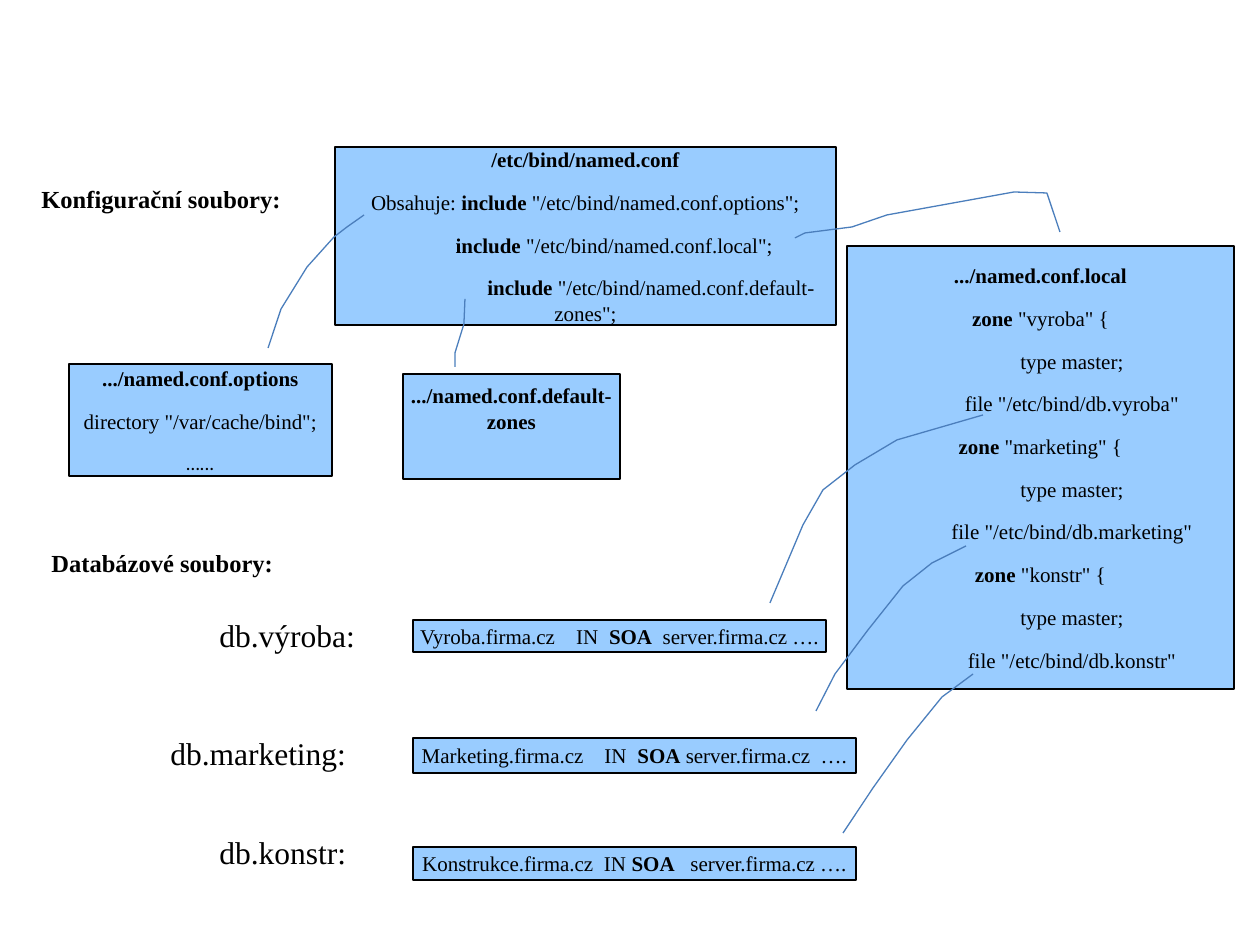
from pptx import Presentation, util as u
from pptx.dml.color import RGBColor
from pptx.enum import shapes, text

PX = u.Inches(1) / 126
COLORS = {"box": "99CCFF", "ink": "000000", "link": "4B7EBC"}
SERIF = "Times New Roman"

# Links from an include or file statement to the file it names, as x, y points
LINKS = [
    [(364, 215), (347, 227), (334, 237), (307, 267), (281, 309), (268, 348)],
    [(465, 299), (464, 324), (455, 353), (455, 367)],
    [(795, 238), (805, 233), (852, 227), (887, 215), (1014, 192),
     (1047, 193), (1060, 232)],
    [(983, 415), (897, 440), (855, 465), (823, 490), (803, 525), (770, 603)],
    [(966, 546), (932, 563), (903, 586), (868, 630), (835, 674), (816, 711)],
    [(973, 674), (942, 697), (907, 740), (873, 788), (843, 833)],
]


def px(*values):
    return [round(v * PX) for v in values]


def rgb(name):
    return RGBColor.from_string(COLORS[name])


def set_line(sp, color):
    sp.line.color.rgb = rgb(color)
    sp.line.width = u.Pt(0.75)
    sp.shadow.inherit = False


def add_runs(p, line, size):
    """Fill a paragraph; parts between asterisks are bold."""
    for i, part in enumerate(line.split("*")):
        if part:
            r = p.add_run()
            r.text = part
            r.font.name = SERIF
            r.font.size = u.Pt(size)
            r.font.bold = i % 2 == 1
            r.font.color.rgb = rgb("ink")


def add_box(s, rect, lines):
    sp = s.shapes.add_shape(shapes.MSO_SHAPE.RECTANGLE, *px(*rect))
    sp.fill.solid()
    sp.fill.fore_color.rgb = rgb("box")
    set_line(sp, "ink")
    tf = sp.text_frame
    tf.word_wrap = True
    tf.vertical_anchor = text.MSO_ANCHOR.MIDDLE
    tf.margin_left = tf.margin_top = tf.margin_right = tf.margin_bottom = 0
    for i, line in enumerate(lines):
        p = tf.add_paragraph() if i else tf.paragraphs[0]
        p.alignment = text.PP_ALIGN.CENTER
        p.space_after = u.Pt(10)
        add_runs(p, line, 12)
    return tf


def add_label(s, rect, line, size):
    tf = s.shapes.add_textbox(*px(*rect)).text_frame
    tf.word_wrap = False
    add_runs(tf.paragraphs[0], line, size)


def indent_first_line(p, points):
    p._p.get_or_add_pPr().set("indent", str(u.Pt(points)))


def add_link(s, points):
    builder = s.shapes.build_freeform(*points[0], scale=PX)
    builder.add_line_segments(points[1:], close=False)
    sp = builder.convert_to_shape()
    sp.fill.background()
    set_line(sp, "link")


def add_config_files(s):
    add_label(s, (29, 178, 266, 43), "*Konfigurační soubory:*", 14)
    tf = add_box(s, (335, 147, 501, 178), [
        "*/etc/bind/named.conf*",
        'Obsahuje: *include* "/etc/bind/named.conf.options";',
        '*include* "/etc/bind/named.conf.local";',
        '*include* "/etc/bind/named.conf.default-zones";'])
    indent_first_line(tf.paragraphs[2], 33)
    indent_first_line(tf.paragraphs[3], 75)

    tf = add_box(s, (69, 364, 263, 112), [
        "*.../named.conf.options*", 'directory "/var/cache/bind";', "…..."])
    dots = tf.paragraphs[2].runs[0].font
    dots.name, dots.size = "Calibri", u.Pt(11)

    tf = add_box(s, (403, 374, 217, 105), ["*.../named.conf.default-zones*"])
    tf.vertical_anchor = text.MSO_ANCHOR.TOP
    tf.margin_top = px(9)[0]

    zones = ["*.../named.conf.local*"]
    for zone in ("vyroba", "marketing", "konstr"):
        zones += [f'*zone* "{zone}" {{', "\ttype master;",
                  f'\tfile "/etc/bind/db.{zone}"']
    add_box(s, (847, 246, 387, 443), zones)


def add_database_files(s):
    add_label(s, (39, 542, 248, 43), "*Databázové soubory:*", 14)
    rows = [
        ("db.výroba:", (207, 610, 168, 50), (413, 620, 413, 32),
         "Vyroba.firma.cz    IN  *SOA*  server.firma.cz …."),
        ("db.marketing:", (158, 728, 217, 50), (413, 738, 443, 35),
         "Marketing.firma.cz    IN  *SOA* server.firma.cz  …."),
        ("db.konstr:", (207, 827, 168, 50), (413, 847, 443, 33),
         "Konstrukce.firma.cz  IN *SOA*   server.firma.cz …."),
    ]
    for name, label_rect, box_rect, record in rows:
        add_label(s, label_rect, name, 18)
        add_box(s, box_rect, [record])


def main():
    prs = Presentation()
    prs.slide_width, prs.slide_height = px(1260, 945)
    s = prs.slides.add_slide(prs.slide_layouts[6])
    add_config_files(s)
    add_database_files(s)
    for points in LINKS:
        add_link(s, points)
    prs.save("out.pptx")


if __name__ == "__main__":
    main()
